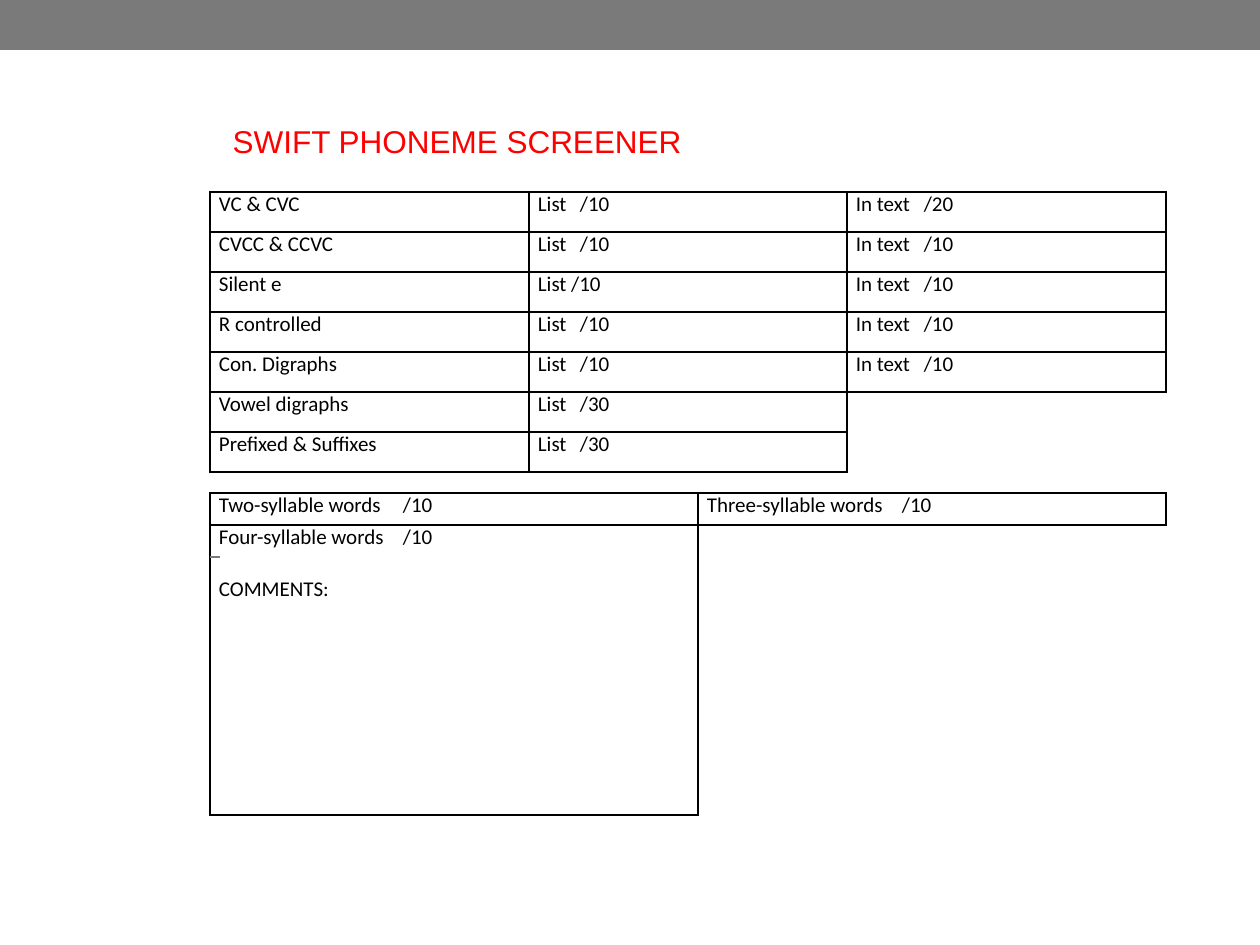
from dataclasses import dataclass

from lxml import etree
from pptx import Presentation
from pptx.dml.color import RGBColor
from pptx.enum.shapes import MSO_CONNECTOR, MSO_SHAPE
from pptx.enum.text import MSO_ANCHOR, MSO_AUTO_SIZE, PP_ALIGN
from pptx.oxml.ns import qn
from pptx.util import Emu, Pt

RECT = MSO_SHAPE.RECTANGLE
STRAIGHT = MSO_CONNECTOR.STRAIGHT
TOP = MSO_ANCHOR.TOP
FIXED = MSO_AUTO_SIZE.NONE
LEFT = PP_ALIGN.LEFT
SCALE = 914400 / 126


@dataclass(frozen=True)
class Theme:
    gray: str = "7A7A7A"
    ink: str = "000000"
    red: str = "FF0000"
    head: str = "Arial"
    body: str = "Calibri"
    large: int = 18
    small: int = 12
    rule: float = 1
    thin: float = 0.75


THEME = Theme()

SCORES = [
    ["VC & CVC", "List\t/10", "In text\t/20"],
    ["CVCC & CCVC", "List\t/10", "In text\t/10"],
    ["Silent e", "List /10", "In text\t/10"],
    ["R controlled", "List\t/10", "In text\t/10"],
    ["Con. Digraphs", "List\t/10", "In text\t/10"],
    ["Vowel digraphs", "List\t/30", ""],
    ["Prefixed & Suffixes", "List\t/30", ""],
]
WORDS = [
    ["Two-syllable words\t/10", "Three-syllable words\t/10"],
    ["Four-syllable words\t/10\nCOMMENTS:", ""],
]


def px(n):
    return Emu(round(n * SCALE))


def color(code):
    return RGBColor.from_string(code)


def write(frame, text, font=THEME.body, size=THEME.small, ink=THEME.ink,
          stop=0, gap=0):
    for i, line in enumerate(text.split("\n")):
        para = frame.paragraphs[0] if i == 0 else frame.add_paragraph()
        para.alignment = LEFT
        if i:
            para.space_before = Pt(gap)
        if "\t" in line:
            tabs = etree.SubElement(para._p.get_or_add_pPr(), qn("a:tabLst"))
            etree.SubElement(tabs, qn("a:tab"), pos=str(px(stop)), algn="l")
        run = para.add_run()
        run.text = line
        run.font.name = font
        run.font.size = Pt(size)
        run.font.color.rgb = color(ink)


def edge(cell, sides):
    props = cell._tc.get_or_add_tcPr()
    for i, side in enumerate("LRTB"):
        line = etree.Element(qn(f"a:ln{side}"), w=str(Pt(THEME.rule)))
        if side in sides:
            fill = etree.SubElement(line, qn("a:solidFill"))
            etree.SubElement(fill, qn("a:srgbClr"), val=THEME.ink)
        else:
            etree.SubElement(line, qn("a:noFill"))
        props.insert(i, line)


def grid(slide, x, y, cols, rows, data, stops):
    frame = slide.shapes.add_table(len(rows), len(cols), px(x), px(y),
                                   px(sum(cols)), px(sum(rows)))
    table = frame.table
    table.first_row = table.horz_banding = False
    for col, width in zip(table.columns, cols):
        col.width = px(width)
    for r, high in enumerate(rows):
        table.rows[r].height = px(high)
        for c, text in enumerate(data[r]):
            cell = table.cell(r, c)
            cell.margin_left = cell.margin_right = px(9)
            cell.margin_top = cell.margin_bottom = 0
            cell.fill.background()
            if text:
                write(cell.text_frame, text, stop=stops[c], gap=14.6)
                edge(cell, "LRTB")
            else:
                edge(cell, "LT" if data[r - 1][c] else "L")


def band(slide, x, y, w, h):
    shape = slide.shapes.add_shape(RECT, px(x), px(y), px(w), px(h))
    shape.shadow.inherit = False
    shape.fill.solid()
    shape.fill.fore_color.rgb = color(THEME.gray)
    shape.line.fill.background()


def rule(slide, x, y, end):
    line = slide.shapes.add_connector(STRAIGHT, px(x), px(y), px(end), px(y))
    line.line.color.rgb = color(THEME.gray)
    line.line.width = Pt(THEME.thin)
    etree.SubElement(line._element.spPr, qn("a:effectLst"))


def title(slide, text, x, y, w, h):
    shape = slide.shapes.title
    shape.left, shape.top, shape.width, shape.height = map(px, (x, y, w, h))
    frame = shape.text_frame
    frame.word_wrap = True
    frame.auto_size = FIXED
    frame.vertical_anchor = TOP
    write(frame, text, font=THEME.head, size=THEME.large, ink=THEME.red)


def main():
    deck = Presentation()
    deck.slide_width, deck.slide_height = px(1260), px(945)
    slide = deck.slides.add_slide(deck.slide_layouts[5])
    band(slide, 0, 0, 1260, 50)
    grid(slide, 210, 192, [319, 318, 319], [40] * 7, SCORES, [0, 42, 68])
    grid(slide, 210, 493, [488, 468], [32, 290], WORDS, [184, 195])
    rule(slide, 220, 557, 210)
    title(slide, "SWIFT PHONEME SCREENER", 220, 116, 914, 50)
    deck.save("out.pptx")


if __name__ == "__main__":
    main()
